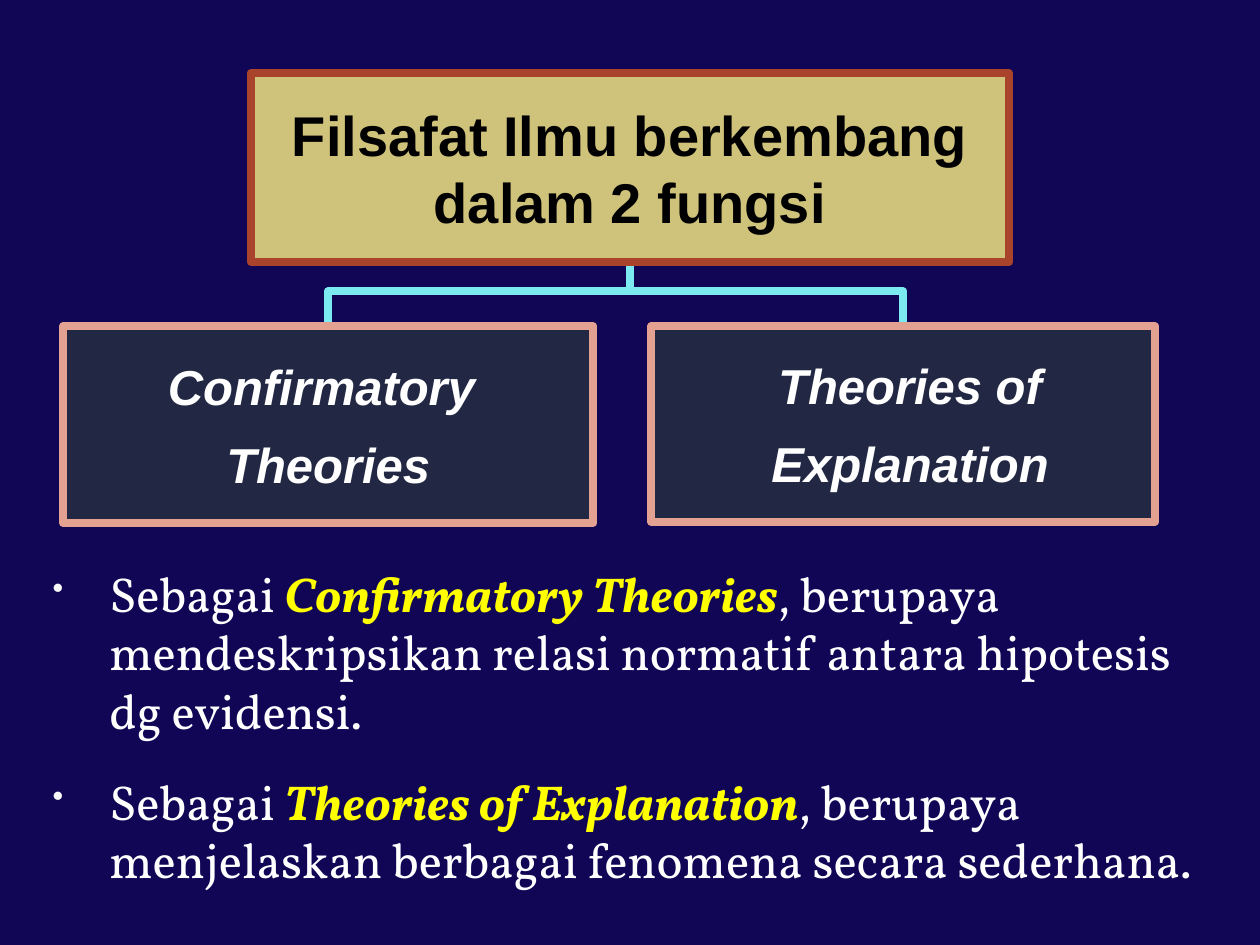
from lxml import etree
from pptx import Presentation
from pptx.dml.color import RGBColor
from pptx.enum import shapes, text
from pptx.oxml import ns
from pptx.util import Pt

NAVY = RGBColor(0x11, 0x06, 0x56)
CREAM = RGBColor(0xFF, 0xF1, 0x85)
RUST = RGBColor(0xA9, 0x43, 0x2B)
SLATE = RGBColor(0x2A, 0x37, 0x3D)
SALMON = RGBColor(0xE3, 0xA1, 0x92)
CYAN = RGBColor(0x7B, 0xEB, 0xF1)
BLACK = RGBColor(0, 0, 0)
WHITE = RGBColor(0xFF, 0xFF, 0xFF)
YELLOW = RGBColor(0xFF, 0xFF, 0)

LINE_WIDTH = 4.5
BUS_Y = 166.5

TOPIC = dict(lines=["Filsafat Ilmu berkembang dalam 2 fungsi"],
             area=(143.3, 41.8, 433.4, 108))
FUNCTIONS = [
    dict(lines=["Confirmatory ", "Theories"], area=(36, 186.5, 303.1, 112.3)),
    dict(lines=[" Theories of", " Explanation"], area=(372.2, 186.5, 288, 111.6)),
]
TOPIC_STYLE = dict(fill=CREAM, opacity=80, border=RUST,
                   font=dict(name="Arial", size=Pt(32), bold=True, italic=False), ink=BLACK)
FUNCTION_STYLE = dict(fill=SLATE, opacity=70, border=SALMON,
                      font=dict(name="Arial", size=Pt(28), bold=True, italic=True), ink=WHITE)

EXPLANATIONS = [
    ("Sebagai ", "Confirmatory Theories",
     ", berupaya mendeskripsikan relasi normatif antara hipotesis dg evidensi."),
    ("Sebagai ", "Theories of Explanation",
     ", berupaya menjelaskan berbagai fenomena secara sederhana."),
]
EXPLANATION_AREA = (12.2, 318.2, 684, 185.8)
PLAIN = dict(name="Vollkorn", size=Pt(28), bold=False, italic=False)
EMPHASIS = dict(PLAIN, bold=True, italic=True)


def apply(target, values):
    for key, value in values.items():
        setattr(target, key, value)


def add_run(paragraph, words, font, ink):
    run = paragraph.add_run()
    run.text = words
    apply(run.font, font)
    run.font.color.rgb = ink


def add_xml(parent, tag, **attributes):
    return etree.SubElement(parent, ns.qn(tag), attributes)


def set_line(shape, color):
    shape.line.color.rgb = color
    shape.line.width = Pt(LINE_WIDTH)
    shape.shadow.inherit = False


def add_branch(slide, parent, child):
    left, top, width, height = parent["area"]
    start_x, start_y = left + width / 2, top + height
    child_left, child_top, child_width, _ = child["area"]
    end_x = child_left + child_width / 2
    builder = slide.shapes.build_freeform(Pt(start_x), Pt(start_y))
    corners = [(start_x, BUS_Y), (end_x, BUS_Y), (end_x, child_top)]
    builder.add_line_segments([(Pt(x), Pt(y)) for x, y in corners], close=False)
    branch = builder.convert_to_shape()
    branch.fill.background()
    set_line(branch, CYAN)


def add_box(slide, content, style):
    box = slide.shapes.add_shape(shapes.MSO_SHAPE.RECTANGLE, *map(Pt, content["area"]))
    box.fill.solid()
    box.fill.fore_color.rgb = style["fill"]
    color = box.fill._xPr.find(".//" + ns.qn("a:srgbClr"))
    add_xml(color, "a:alpha", val=str(style["opacity"] * 1000))
    set_line(box, style["border"])
    frame = box.text_frame
    apply(frame, dict(word_wrap=True, vertical_anchor=text.MSO_ANCHOR.MIDDLE))
    apply(frame, {f"margin_{side}": Pt(1.5) for side in ("left", "right", "top", "bottom")})
    for index, line in enumerate(content["lines"]):
        paragraph = frame.add_paragraph() if index else frame.paragraphs[0]
        apply(paragraph, dict(alignment=text.PP_ALIGN.CENTER, space_after=Pt(11)))
        add_run(paragraph, line, style["font"], style["ink"])


def add_explanations(slide):
    frame = slide.shapes.add_textbox(*map(Pt, EXPLANATION_AREA)).text_frame
    frame.word_wrap = True
    for index, (opening, term, rest) in enumerate(EXPLANATIONS):
        paragraph = frame.add_paragraph() if index else frame.paragraphs[0]
        paragraph.space_before = Pt(18)
        properties = paragraph._p.get_or_add_pPr()
        properties.set("marL", str(Pt(43.2)))
        properties.set("indent", str(Pt(-32.4)))
        bullet_color = add_xml(properties, "a:buClr")
        add_xml(bullet_color, "a:srgbClr", val="F9F9F9")
        add_xml(properties, "a:buSzPct", val="65000")
        add_xml(properties, "a:buChar", char="•")
        add_run(paragraph, opening, PLAIN, WHITE)
        add_run(paragraph, term, EMPHASIS, YELLOW)
        add_run(paragraph, rest, PLAIN, WHITE)


def main():
    deck = Presentation()
    apply(deck, dict(slide_width=Pt(720), slide_height=Pt(540)))
    slide = deck.slides.add_slide(deck.slide_layouts[6])
    slide.background.fill.solid()
    slide.background.fill.fore_color.rgb = NAVY
    for function in FUNCTIONS:
        add_branch(slide, TOPIC, function)
    add_box(slide, TOPIC, TOPIC_STYLE)
    for function in FUNCTIONS:
        add_box(slide, function, FUNCTION_STYLE)
    add_explanations(slide)
    deck.save("out.pptx")


if __name__ == "__main__":
    main()
